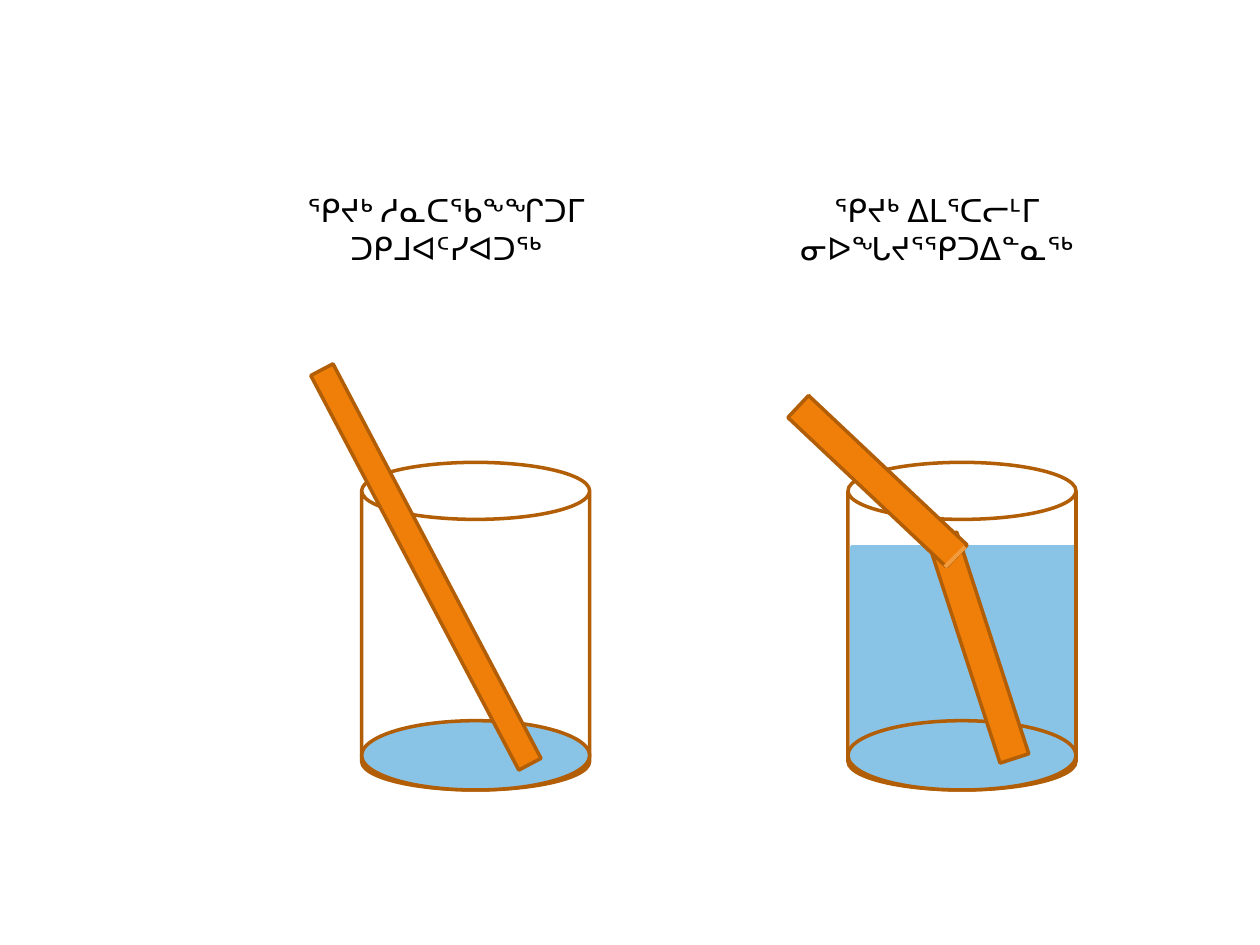
from dataclasses import dataclass

from lxml import etree
from pptx import Presentation
from pptx.dml.color import RGBColor
from pptx.enum import shapes, text
from pptx.oxml.ns import qn
from pptx.util import Inches, Pt


@dataclass(frozen=True)
class Theme:
    water: str = "89C3E5"
    outline: str = "B25E07"
    straw: str = "F07F09"
    seam: str = "F19B3D"
    ink: str = "000000"
    font: str = "Roboto"
    size: float = 18
    line: float = 2
    seam_line: float = 2.25


@dataclass(frozen=True)
class Box:
    left: float
    top: float
    width: float
    height: float
    rotation: float = 0

    def emu(self):
        return [Inches(v) for v in (self.left, self.top, self.width, self.height)]


@dataclass(frozen=True)
class Caption:
    box: Box
    words: str


THEME = Theme()
SHAPE = shapes.MSO_SHAPE

GLASS_LEFTS = (2.87, 6.73)
GLASS_TOP, GLASS_WIDTH, GLASS_HEIGHT, BASE_HEIGHT = 3.67, 1.81, 2.6, 0.55
WATER = Box(6.76, 4.34, 1.77, 1.69)
STRAWS = (
    Box(1.61, 4.4, 3.54, 0.2, 62.2),   # straight, in the empty glass
    Box(6.84, 5.02, 1.85, 0.24, 72),   # part under water
    Box(6.1, 3.7, 1.73, 0.24, 43.3),   # part above water
)
CAPTIONS = (
    Caption(Box(6.02, 1.47, 2.83, 0.71), "ᕿᔪᒃ ᐃᒪᕐᑕᓕᒻᒥ ᓂᐅᖓᔪᕐᕿᑐᐃᓐᓇᖅ"),
    Caption(Box(2.24, 1.47, 2.6, 0.71), "ᕿᔪᒃ ᓱᓇᑕᖃᖕᖏᑐᒥ ᑐᑭᒧᐊᑦᓯᐊᑐᖅ"),
)


def rgb(value: str) -> RGBColor:
    return RGBColor.from_string(value)


def add_figure(s, kind, box: Box, fill: str | None, line: str = THEME.outline):
    sp = s.shapes.add_shape(kind, *box.emu())
    sp.rotation = box.rotation
    sp.shadow.inherit = False
    if fill is None:
        sp.fill.background()
    else:
        sp.fill.solid()
        sp.fill.fore_color.rgb = rgb(fill)
    sp.line.color.rgb = rgb(line)
    sp.line.width = Pt(THEME.line)
    return sp


def add_glass(s, left: float) -> None:
    base_top = GLASS_TOP + GLASS_HEIGHT - BASE_HEIGHT
    add_figure(s, SHAPE.CAN, Box(left, GLASS_TOP, GLASS_WIDTH, GLASS_HEIGHT), None)
    add_figure(s, SHAPE.OVAL, Box(left, base_top, GLASS_WIDTH, BASE_HEIGHT), THEME.water)


def add_seam(s, start: tuple[float, float], end: tuple[float, float]) -> None:
    points = [Inches(v) for v in (*start, *end)]
    line = s.shapes.add_connector(shapes.MSO_CONNECTOR.STRAIGHT, *points)
    line.line.color.rgb = rgb(THEME.seam)
    line.line.width = Pt(THEME.seam_line)
    etree.SubElement(line._element.spPr, qn("a:effectLst"))


def add_text(s, words: str, box: Box, *, size: float = THEME.size,
             color: str = THEME.ink, align=text.PP_ALIGN.CENTER) -> None:
    tf = s.shapes.add_textbox(*box.emu()).text_frame
    tf.word_wrap = True
    tf.auto_size = text.MSO_AUTO_SIZE.SHAPE_TO_FIT_TEXT
    p = tf.paragraphs[0]
    p.alignment = align
    r = p.add_run()
    r.text = words
    r.font.name = THEME.font
    r.font.size = Pt(size)
    r.font.color.rgb = rgb(color)


def main() -> None:
    prs = Presentation()
    prs.slide_width, prs.slide_height = Inches(10), Inches(7.5)
    s = prs.slides.add_slide(prs.slide_layouts[6])

    # Water and glasses
    add_figure(s, SHAPE.RECTANGLE, WATER, THEME.water, THEME.water)
    for left in GLASS_LEFTS:
        add_glass(s, left)

    # Straws, with the seam where one bends at the surface
    for straw in STRAWS:
        add_figure(s, SHAPE.RECTANGLE, straw, THEME.straw)
    add_seam(s, (7.66, 4.34), (7.5, 4.5))

    # Captions
    for caption in CAPTIONS:
        add_text(s, caption.words, caption.box)

    prs.save("out.pptx")


if __name__ == "__main__":
    main()
